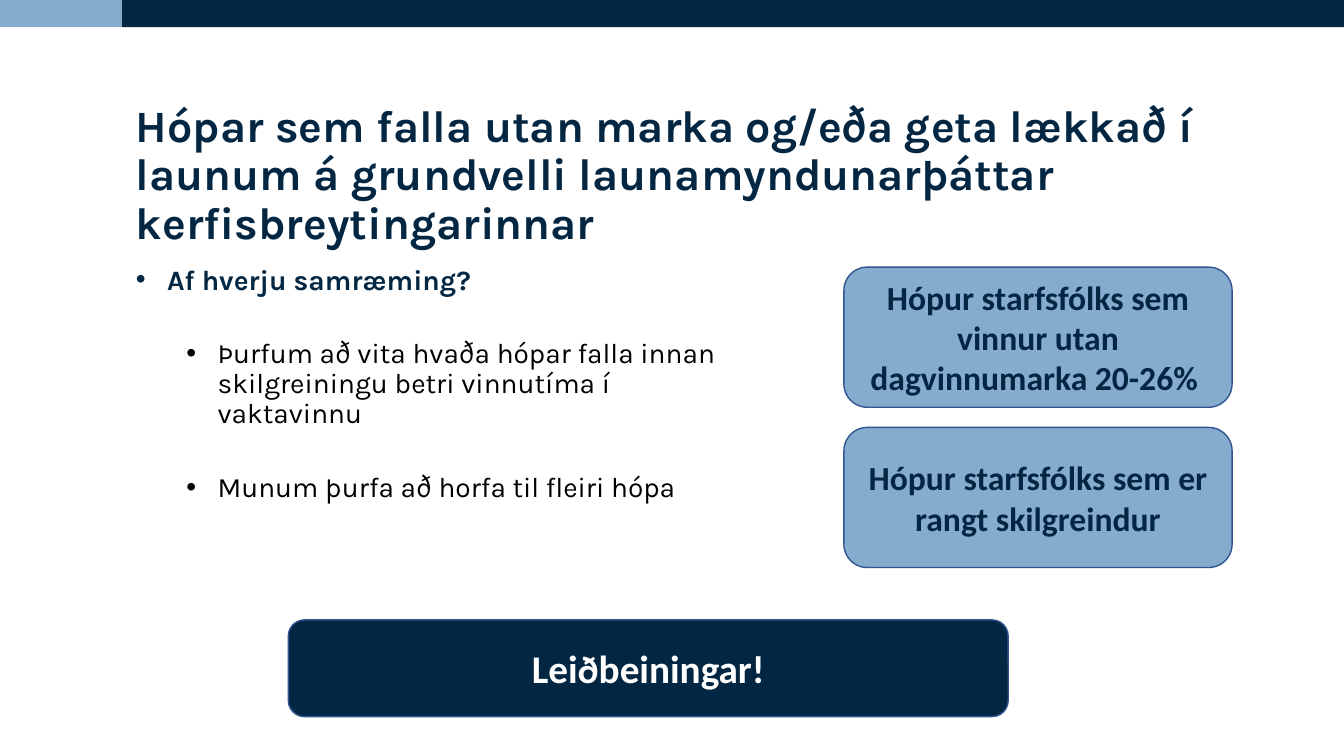
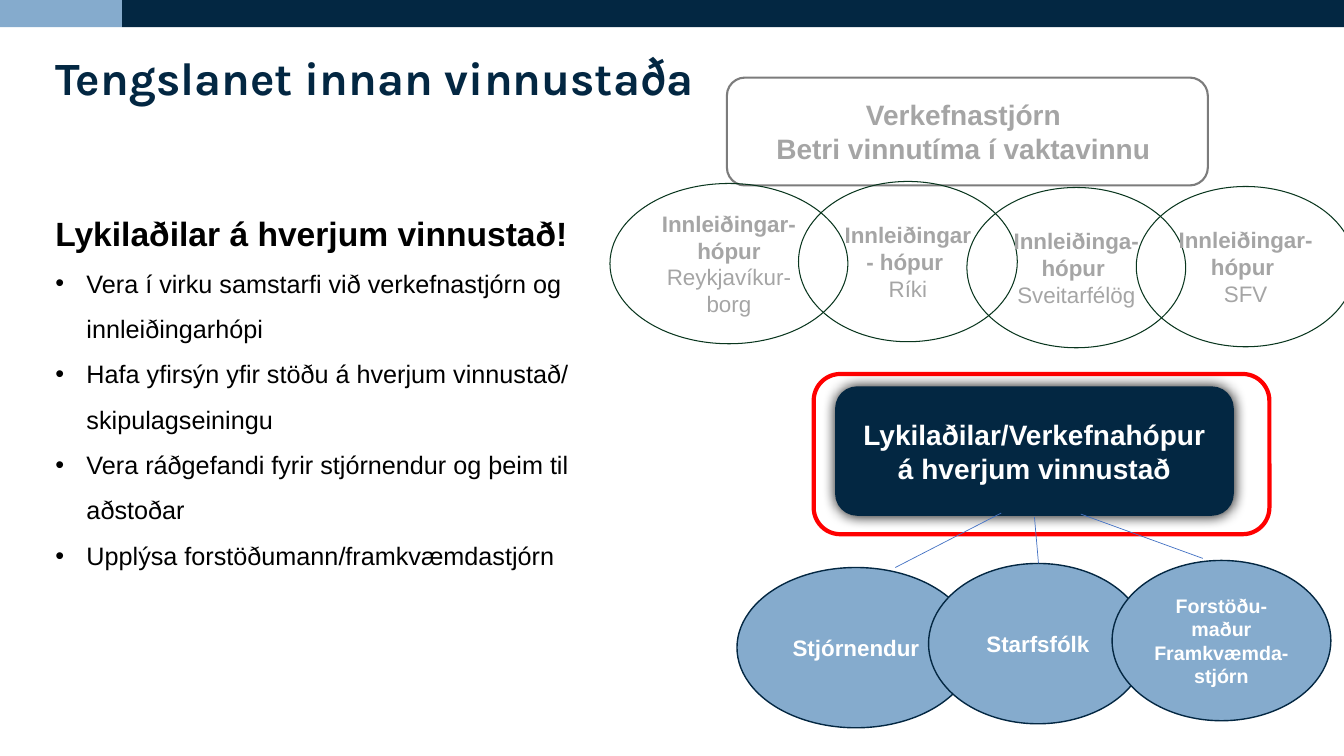
from dataclasses import dataclass
from typing import Optional, Union

from lxml.etree import SubElement
from pptx import Presentation
from pptx.dml.color import RGBColor
from pptx.enum.shapes import MSO_CONNECTOR as Connector, MSO_SHAPE as Preset
from pptx.enum.text import MSO_ANCHOR as Anchor, PP_ALIGN as Align
from pptx.oxml.ns import qn
from pptx.slide import Slide
from pptx.text.text import TextFrame
from pptx.util import Emu, Inches, Length, Pt


@dataclass(frozen=True)
class Theme:
    navy: str = "032742"
    sky: str = "85ABCD"
    white: str = "FFFFFF"
    black: str = "000000"
    muted: str = "A5A5A5"
    gray_edge: str = "7C7C7C"
    green_edge: str = "09361E"
    blue_edge: str = "325491"
    link: str = "4472C4"
    alert: str = "FF0000"
    title_font: str = "Karla"
    body_font: str = "Arial"
    box_font: str = "Calibri"
    title: int = 32
    wide_title: int = 33
    banner: int = 28
    heading: int = 24
    body: int = 20
    item: int = 18
    label: int = 16
    small: int = 14


THEME = Theme()


@dataclass(frozen=True)
class Frame:
    left: float
    top: float
    width: float
    height: float

    def lengths(self) -> tuple[Length, Length, Length, Length]:
        return (Inches(self.left), Inches(self.top),
                Inches(self.width), Inches(self.height))


@dataclass(frozen=True)
class Style:
    size: int
    color: str
    font: str
    bold: bool = True


@dataclass(frozen=True)
class Span:
    text: str
    style: Style


@dataclass(frozen=True)
class Para:
    spans: tuple[Span, ...]
    spacing: Optional[Union[float, Length]] = None
    before: float = 0
    level: int = 0
    indent: float = 0


@dataclass(frozen=True)
class Box:
    frame: Frame
    preset: Preset
    fill: Optional[str] = None
    edge: Optional[str] = None
    weight: float = 1
    paras: tuple[Para, ...] = ()
    glow: bool = False


@dataclass(frozen=True)
class Link:
    start: tuple[float, float]
    end: tuple[float, float]


BANDS = (
    Box(Frame(1.21, 0, 12.12, 0.27), Preset.RECTANGLE, THEME.navy),
    Box(Frame(0, 0, 1.21, 0.27), Preset.RECTANGLE, THEME.sky),
)
HANGING = 0.31


def line(text: str, style: Style) -> Para:
    return Para((Span(text, style),))


def fill_text(frame: TextFrame, paras: tuple[Para, ...], align: Align) -> None:
    frame.word_wrap = True
    for index, item in enumerate(paras):
        para = frame.paragraphs[0] if index == 0 else frame.add_paragraph()
        para.alignment = align
        para.level = item.level
        para.space_before = Pt(item.before)
        if item.spacing is not None:
            para.line_spacing = item.spacing
        if item.indent:
            props = para._p.get_or_add_pPr()
            props.set("marL", str(Inches(item.indent)))
            props.set("indent", str(-Inches(HANGING)))
            SubElement(props, qn("a:buFont")).set("typeface", THEME.body_font)
            SubElement(props, qn("a:buChar")).set("char", "•")
        for part in item.spans:
            span = para.add_run()
            span.text = part.text
            span.font.size = Pt(part.style.size)
            span.font.name = part.style.font
            span.font.bold = part.style.bold
            span.font.color.rgb = RGBColor.from_string(part.style.color)


def draw_text(page: Slide, frame: Frame, paras: tuple[Para, ...]) -> None:
    box = page.shapes.add_textbox(*frame.lengths())
    fill_text(box.text_frame, paras, Align.LEFT)


def draw_title(page: Slide, frame: Frame, text: str, size: int) -> None:
    style = Style(size, THEME.navy, THEME.title_font)
    draw_text(page, frame, (Para((Span(text, style),), 0.9, 10),))


def draw_box(page: Slide, item: Box) -> None:
    shape = page.shapes.add_shape(item.preset, *item.frame.lengths())
    shape.shadow.inherit = False
    if item.fill:
        shape.fill.solid()
        shape.fill.fore_color.rgb = RGBColor.from_string(item.fill)
    else:
        shape.fill.background()
    if item.edge:
        shape.line.color.rgb = RGBColor.from_string(item.edge)
        shape.line.width = Pt(item.weight)
    else:
        shape.line.fill.background()
    if item.glow:
        effects = shape._element.spPr.find(qn("a:effectLst"))
        shadow = SubElement(effects, qn("a:outerShdw"))
        shadow.set("blurRad", str(Pt(10)))
        shadow.set("dist", str(Emu(0)))
        shadow.set("algn", "ctr")
        shadow.set("rotWithShape", "0")
        SubElement(shadow, qn("a:srgbClr")).set("val", THEME.black)
    if item.paras:
        shape.text_frame.vertical_anchor = Anchor.MIDDLE
        fill_text(shape.text_frame, item.paras, Align.CENTER)


def draw_boxes(page: Slide, items: tuple[Box, ...]) -> None:
    for item in items:
        draw_box(page, item)


def draw_link(page: Slide, link: Link) -> None:
    points = [Inches(value) for value in link.start + link.end]
    connector = page.shapes.add_connector(Connector.STRAIGHT, *points)
    connector.line.color.rgb = RGBColor.from_string(THEME.link)
    connector.line.width = Pt(0.5)
    SubElement(connector._element.spPr, qn("a:effectLst"))


def build_groups_page(page: Slide) -> None:
    draw_title(page, Frame(1.25, 0.98, 11.88, 1.9),
               "Hópar sem falla utan marka og/eða geta lækkað í launum á "
               "grundvelli launamyndunarþáttar kerfisbreytingarinnar", THEME.title)
    question = Style(THEME.body, THEME.navy, THEME.title_font)
    answer = Style(THEME.body, THEME.black, THEME.title_font, False)
    answers = (
        "Þurfum að vita hvaða hópar falla innan skilgreiningu betri vinnutíma í vaktavinnu",
        "Munum þurfa að horfa til fleiri hópa",
    )
    draw_text(page, Frame(1.25, 2.55, 6.13, 3.68), (
        Para((Span("Af hverju samræming?", question),), Pt(24), 10, 0, HANGING),
        *(Para((Span(text, answer),), 0.9, 31, 1, 0.81) for text in answers),
    ))
    group = Style(THEME.heading, THEME.navy, THEME.box_font)
    groups = ("Hópur starfsfólks sem vinnur utan dagvinnumarka 20-26% ",
              "Hópur starfsfólks sem er rangt skilgreindur")
    draw_boxes(page, tuple(
        Box(Frame(8.37, 2.65 + 1.59 * row, 3.85, 1.39), Preset.ROUNDED_RECTANGLE,
            THEME.sky, THEME.blue_edge, paras=(line(text, group),))
        for row, text in enumerate(groups)))
    banner = Style(THEME.banner, THEME.white, THEME.box_font)
    draw_box(page, Box(Frame(2.86, 6.15, 7.14, 0.96), Preset.ROUNDED_RECTANGLE,
                       THEME.navy, THEME.blue_edge,
                       paras=(line("Leiðbeiningar!", banner),)))


def build_network_page(page: Slide) -> None:
    oval_height = 1.59
    board = Style(THEME.body, THEME.muted, THEME.body_font)
    group = Style(THEME.label, THEME.muted, THEME.body_font)
    owner = Style(THEME.label, THEME.muted, THEME.body_font, False)
    draw_box(page, Box(Frame(7.21, 0.77, 4.77, 1.07), Preset.ROUNDED_RECTANGLE,
                       None, THEME.gray_edge, 1.5,
                       (line("Verkefnastjórn ", board),
                        line("Betri vinnutíma í vaktavinnu ", board))))
    teams = (
        (6.05, 1.82, 2.36, (Para((Span("Innleiðingar- hópur ", group),
                                  Span("Reykjavíkur-borg", owner))),)),
        (7.92, 1.8, 2.17, (line("Innleiðingar - hópur ", group), line("Ríki", owner))),
        (9.59, 1.86, 2.17, (line("Innleiðinga- hópur ", group),
                            line("Sveitarfélög", owner))),
        (11.27, 1.85, 2.17, (line("Innleiðingar- hópur ", group), line("SFV", owner))),
    )
    draw_boxes(page, tuple(
        Box(Frame(left, top, width, oval_height), Preset.OVAL,
            None, THEME.green_edge, 0.75, paras)
        for left, top, width, paras in teams))
    draw_box(page, Box(Frame(8.07, 3.71, 4.52, 1.59), Preset.ROUNDED_RECTANGLE,
                       None, THEME.alert, 3))

    draw_title(page, Frame(0.45, 0.5, 6.86, 0.86),
               "Tengslanet innan vinnustaða", THEME.wide_title)
    heading = Style(THEME.heading, THEME.black, THEME.body_font)
    duty = Style(THEME.item, THEME.black, THEME.body_font, False)
    duties = (
        "Vera í virku samstarfi við verkefnastjórn og innleiðingarhópi",
        "Hafa yfirsýn yfir stöðu á hverjum vinnustað/ skipulagseiningu",
        "Vera ráðgefandi fyrir stjórnendur og þeim til aðstoðar",
        "Upplýsa forstöðumann/framkvæmdastjórn",
    )
    draw_text(page, Frame(0.45, 1.86, 6.07, 3.5), (
        Para((Span("Lykilaðilar á hverjum vinnustað!", heading),), 1.5),
        *(Para((Span(text, duty),), 1.5, indent=HANGING) for text in duties),
    ))

    key = Style(THEME.body, THEME.white, THEME.body_font)
    draw_box(page, Box(Frame(8.29, 3.84, 3.94, 1.27), Preset.ROUNDED_RECTANGLE,
                       THEME.navy, THEME.navy,
                       paras=(line("Lykilaðilar/Verkefnahópur á hverjum vinnustað", key),),
                       glow=True))
    role = Style(THEME.label, THEME.white, THEME.body_font)
    small_role = Style(THEME.small, THEME.white, THEME.body_font)
    roles = (
        (7.31, 5.63, 2.36, (line("Stjórnendur", role),)),
        (9.21, 5.59, 2.17, (line("Starfsfólk", role),)),
        (11.03, 5.56, 2.17, (line("Forstöðu-maður", small_role),
                             line("Framkvæmda-stjórn", small_role))),
    )
    draw_boxes(page, tuple(
        Box(Frame(left, top, width, oval_height), Preset.OVAL,
            THEME.sky, THEME.navy, paras=paras)
        for left, top, width, paras in roles))
    for link in (Link((9.93, 5.09), (8.88, 5.63)),
                 Link((11.93, 5.54), (10.72, 5.1)),
                 Link((10.3, 5.59), (10.26, 5.13))):
        draw_link(page, link)


def main() -> None:
    deck = Presentation()
    deck.slide_width, deck.slide_height = Inches(13.33), Inches(7.5)
    for build in (build_groups_page, build_network_page):
        page = deck.slides.add_slide(deck.slide_layouts[6])
        draw_boxes(page, BANDS)
        build(page)
    deck.save("out.pptx")


if __name__ == "__main__":
    main()
